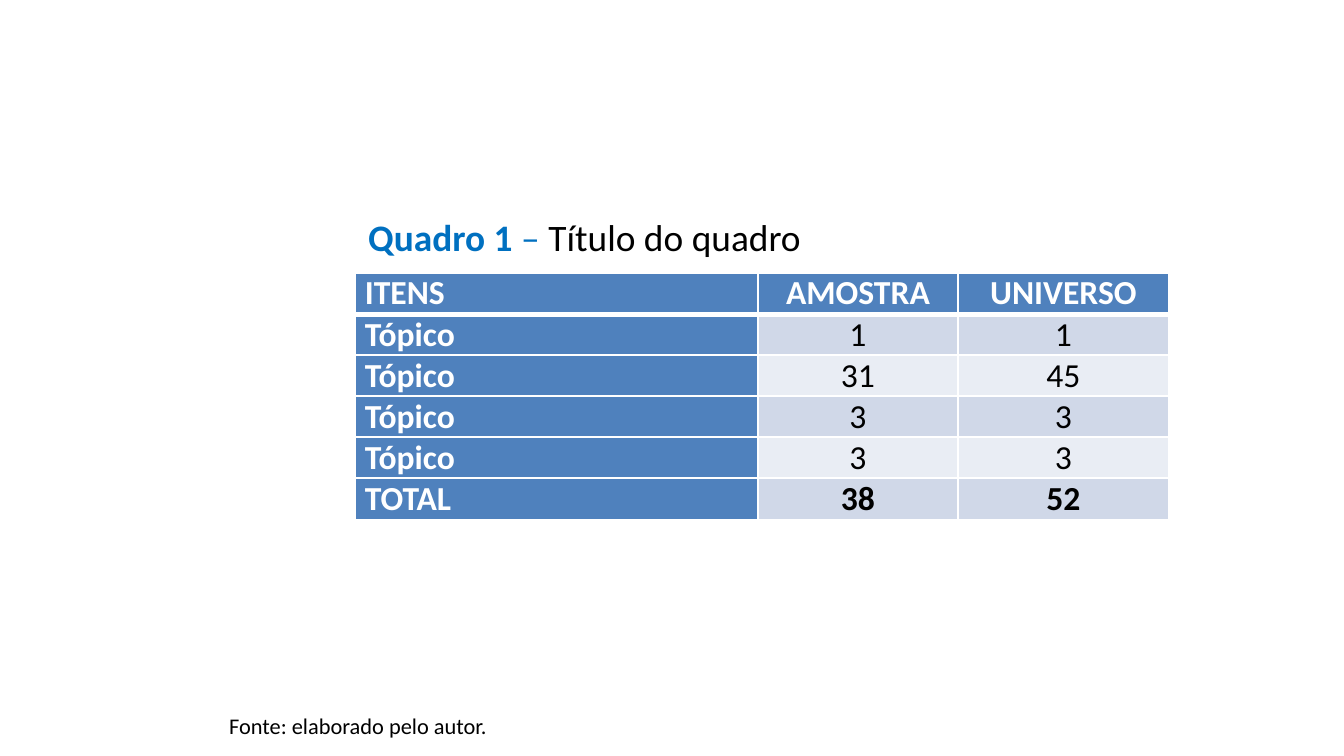
from lxml import etree
from pptx import Presentation
from pptx import util as u
from pptx.dml.color import RGBColor
from pptx.enum import text
from pptx.oxml import ns

PX = 914400 / 134.4
COLORS = {
    "white": "FFFFFF",
    "black": "000000",
    "title": "0070C0",
    "header": "4F81BD",
    "band_dark": "D0D8E8",
    "band_light": "E9EDF4",
}
ROWS = [
    ("ITENS", "AMOSTRA", "UNIVERSO"),
    ("Tópico", "1", "1"),
    ("Tópico", "31", "45"),
    ("Tópico", "3", "3"),
    ("Tópico", "3", "3"),
    ("TOTAL", "38", "52"),
]
COLUMN_WIDTHS = [403, 200, 211]
ROW_HEIGHT = 41


def px(value):
    return u.Emu(round(value * PX))


def add_span(para, wording, size=18, color="black", bold=False):
    span = para.add_run()
    span.text = wording
    span.font.name = "Calibri"
    span.font.size = u.Pt(size)
    span.font.bold = bold
    span.font.color.rgb = RGBColor.from_string(COLORS[color])


deck = Presentation()
deck.slide_width, deck.slide_height = px(1344), px(756)
page = deck.slides.add_slide(deck.slide_layouts[6])

frame = page.shapes.add_table(
    len(ROWS), len(COLUMN_WIDTHS), px(355), px(273),
    px(sum(COLUMN_WIDTHS)), px(ROW_HEIGHT * len(ROWS)),
)
table = frame.table
table.first_row = table.horz_banding = False
for column, width in zip(table.columns, COLUMN_WIDTHS):
    column.width = px(width)

for r, values in enumerate(ROWS):
    table.rows[r].height = px(ROW_HEIGHT)
    for c, wording in enumerate(values):
        cell = table.cell(r, c)
        cell.margin_left = cell.margin_right = px(10)
        cell.margin_top = cell.margin_bottom = 0
        heading = r == 0 or c == 0
        if r > 0 and c == 1:
            cell.vertical_anchor = text.MSO_ANCHOR.BOTTOM
        para = cell.text_frame.paragraphs[0]
        para.alignment = text.PP_ALIGN.CENTER if c else text.PP_ALIGN.LEFT
        add_span(para, wording, color="white" if heading else "black",
                 bold=heading or r == len(ROWS) - 1)

        properties = cell._tc.get_or_add_tcPr()
        for side in ("L", "R", "T", "B"):
            thick = (r, side) in ((0, "B"), (1, "T"))
            line = etree.SubElement(properties, ns.qn(f"a:ln{side}"),
                                    w=str(u.Pt(3 if thick else 1)))
            fill = etree.SubElement(line, ns.qn("a:solidFill"))
            etree.SubElement(fill, ns.qn("a:srgbClr"), val=COLORS["white"])
        band = "band_dark" if r % 2 else "band_light"
        cell.fill.solid()
        cell.fill.fore_color.rgb = RGBColor.from_string(
            COLORS["header" if heading else band])

for bounds, spans in (
    ((216, 706, 672, 40),
     [("Fonte: elaborado pelo autor.", {"size": 12})]),
    ((355, 208, 814, 59),
     [("Quadro 1", {"size": 20, "color": "title", "bold": True}),
      (" – ", {"size": 20, "color": "title"}),
      ("Título do quadro", {"size": 20})]),
):
    box = page.shapes.add_textbox(*map(px, bounds))
    box.text_frame.word_wrap = True
    box.text_frame.auto_size = text.MSO_AUTO_SIZE.SHAPE_TO_FIT_TEXT
    para = box.text_frame.paragraphs[0]
    for wording, style in spans:
        add_span(para, wording, **style)

deck.save("out.pptx")
